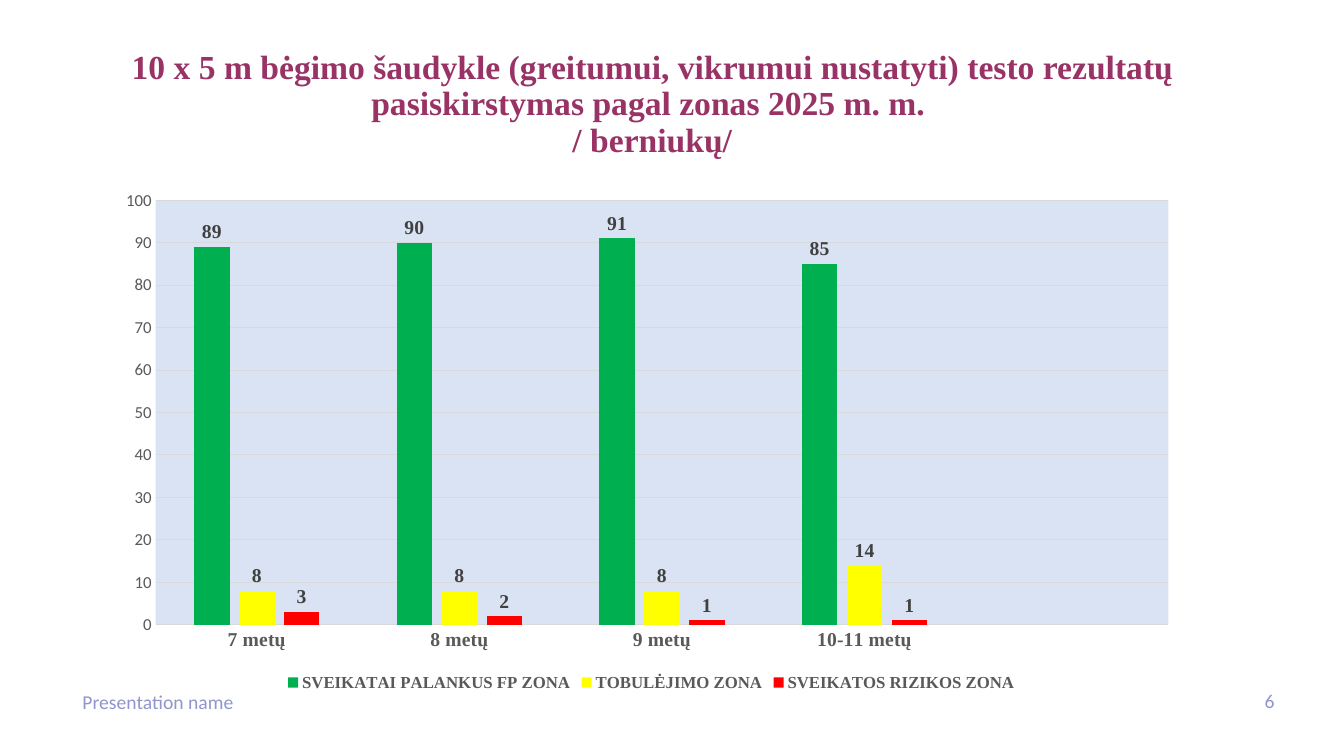
"""Build a slide with a column chart of shuttle run results for boys."""
from lxml import etree
from pptx import Presentation
from pptx import util as u
from pptx.chart.data import CategoryChartData
from pptx.dml.color import RGBColor
from pptx.enum import chart as ch
from pptx.enum import text
from pptx.oxml import parse_xml
from pptx.oxml.ns import nsdecls, qn

PLUM = RGBColor(0x99, 0x33, 0x66)
LILAC = RGBColor(0x8E, 0x96, 0xCD)
GRAY = RGBColor(0x59, 0x59, 0x59)
DARK = RGBColor(0x40, 0x40, 0x40)
PALE = RGBColor(0xD9, 0xD9, 0xD9)
GREEN = RGBColor(0x00, 0xB0, 0x50)
GOLD = RGBColor(0xFF, 0xFF, 0x00)
RED = RGBColor(0xFF, 0x00, 0x00)
SKY = RGBColor(0xDA, 0xE3, 0xF3)
SERIF, SANS = "Times New Roman", "Calibri"

TITLE = [
    "10 x 5 m bėgimo šaudykle (greitumui, vikrumui nustatyti) testo rezultatų "
    "pasiskirstymas pagal zonas 2025 m. m. ",
    "/ berniukų/",
]
FOOT, PAGE = "Presentation name", "6"
AGES = ["7 metų", "8 metų", "9 metų", "10-11 metų", ""]
ZONES = [
    ("SVEIKATAI PALANKUS FP ZONA", [89, 90, 91, 85, None], GREEN),
    ("TOBULĖJIMO ZONA", [8, 8, 8, 14, None], GOLD),
    ("SVEIKATOS RIZIKOS ZONA", [3, 2, 1, 1, None], RED),
]
PLOT = {"x": 0.037, "y": 0.097, "w": 0.946, "h": 0.774}


def style(font, size, color, name, bold=False):
    font.size, font.name, font.bold = u.Pt(size), name, bold
    font.color.rgb = color


def add_text(slide, place, lines, align, look):
    frame = slide.shapes.add_textbox(*map(u.Inches, place)).text_frame
    frame.word_wrap = True
    para = frame.paragraphs[0]
    para.alignment = align
    for i, line in enumerate(lines):
        if i:
            para.add_line_break()
        run = para.add_run()
        run.text = line
        style(run.font, *look)
    return frame


def set_line(line, color):
    line.color.rgb = color
    line.width = u.Pt(0.75)


def set_plot(chart):
    area = chart._chartSpace.chart.plotArea
    for old in area.findall(qn("c:layout")):
        area.remove(old)
    parts = '<c:layoutTarget val="inner"/><c:xMode val="edge"/><c:yMode val="edge"/>'
    parts += "".join(f'<c:{key} val="{val}"/>' for key, val in PLOT.items())
    area.insert(0, parse_xml(
        f'<c:layout {nsdecls("c")}><c:manualLayout>{parts}</c:manualLayout></c:layout>'))
    props = etree.SubElement(area, qn("c:spPr"))
    fill = etree.SubElement(props, qn("a:solidFill"))
    etree.SubElement(fill, qn("a:srgbClr"), val=str(SKY))


def add_chart(slide):
    data = CategoryChartData()
    data.categories = AGES
    for name, vals, _ in ZONES:
        data.add_series(name, vals)
    place = map(u.Inches, (1.15, 1.46, 10.62, 5.44))
    chart = slide.shapes.add_chart(
        ch.XL_CHART_TYPE.COLUMN_CLUSTERED, *place, data).chart
    chart.has_title = False
    chart.font.size, chart.font.name = u.Pt(10), SANS
    chart.has_legend = True
    chart.legend.position = ch.XL_LEGEND_POSITION.BOTTOM
    chart.legend.include_in_layout = False
    style(chart.legend.font, 12, GRAY, SERIF, True)

    cat, val = chart.category_axis, chart.value_axis
    for axis in (cat, val):
        axis.major_tick_mark = axis.minor_tick_mark = ch.XL_TICK_MARK.NONE
    style(cat.tick_labels.font, 14, GRAY, SERIF, True)
    style(val.tick_labels.font, 12, GRAY, SANS)
    set_line(cat.format.line, PALE)
    val.format.line.fill.background()
    set_line(val.major_gridlines.format.line, PALE)
    val.minimum_scale, val.maximum_scale, val.major_unit = 0, 100, 10

    plot = chart.plots[0]
    plot.gap_width, plot.overlap = 219, -27
    plot.vary_by_categories = False
    for series, (_, _, color) in zip(plot.series, ZONES):
        series.format.fill.solid()
        series.format.fill.fore_color.rgb = color
        series.invert_if_negative = False
        labels = series.data_labels
        labels.show_value = True
        labels.position = ch.XL_LABEL_POSITION.OUTSIDE_END
        style(labels.font, 14, DARK, SERIF, True)
    set_plot(chart)


def main():
    deck = Presentation()
    deck.slide_width, deck.slide_height = u.Inches(13.33), u.Inches(7.5)
    slide = deck.slides.add_slide(deck.slide_layouts[6])
    side = text.PP_ALIGN
    title = add_text(slide, (0.72, 0.35, 11.5, 1.38), TITLE, side.CENTER,
                     (24, PLUM, SERIF, True))
    title.vertical_anchor = text.MSO_ANCHOR.MIDDLE
    title.paragraphs[0].line_spacing = 0.9
    small = (14, LILAC, SANS)
    add_text(slide, (0.72, 6.79, 6.3, 0.38), [FOOT], side.LEFT, small)
    add_text(slide, (12.22, 6.79, 0.52, 0.4), [PAGE], side.RIGHT, small)
    add_chart(slide)
    deck.save("out.pptx")


if __name__ == "__main__":
    main()
